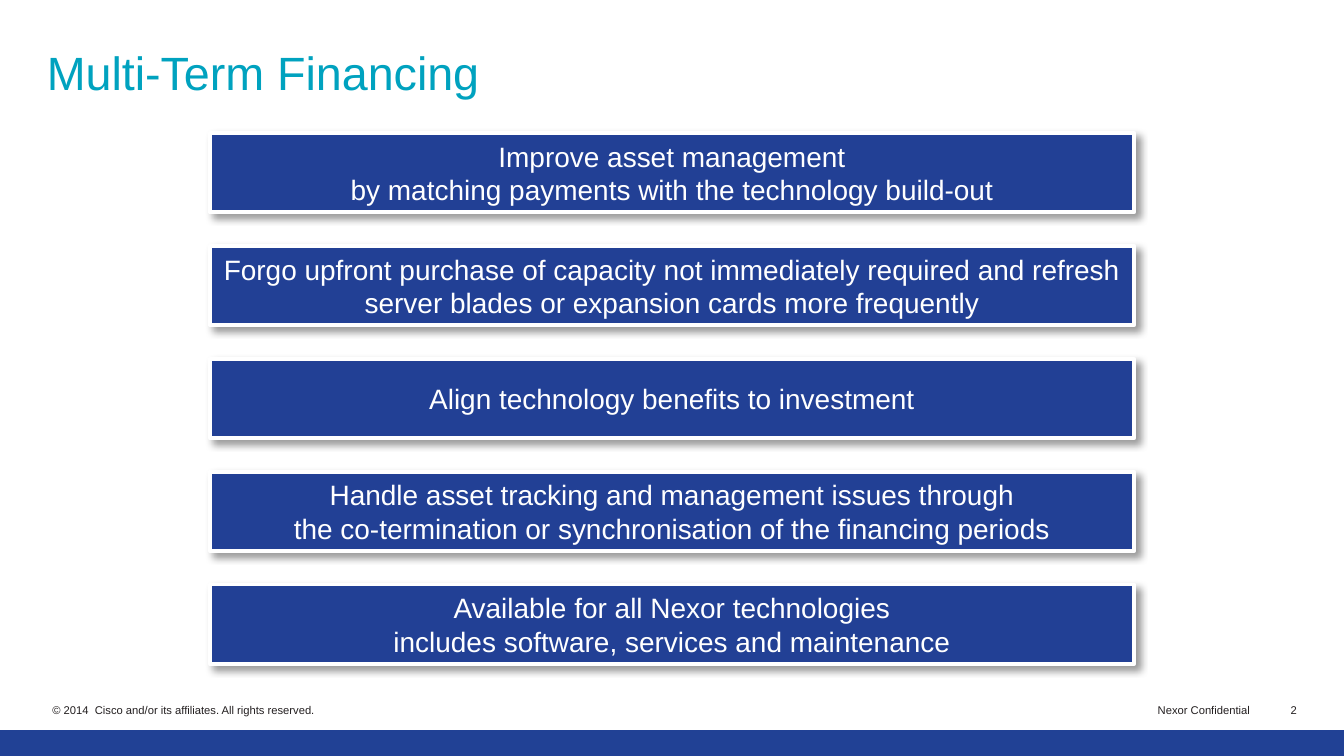
from lxml.etree import SubElement
from pptx import Presentation
from pptx.dml.color import RGBColor
from pptx.enum.shapes import MSO_CONNECTOR, MSO_SHAPE
from pptx.enum.text import MSO_ANCHOR, PP_ALIGN
from pptx.oxml.ns import qn
from pptx.util import Inches, Pt

WIDTH = 10
HEIGHT = WIDTH * 9 / 16
BENEFIT_LEFT, BENEFIT_TOP = 1.56, 0.99
BENEFIT_WIDTH, BENEFIT_HEIGHT = 6.88, 0.59
ROW_PITCH = 0.84
FOOTER_TOP, FOOTER_HEIGHT = 5.19, 0.17

BENEFITS = [
    "Improve asset management\vby matching payments with the technology build-out",
    "Forgo upfront purchase of capacity not immediately required and refresh "
    "server blades or expansion cards more frequently",
    "Align technology benefits to investment",
    "Handle asset tracking and management issues through\v"
    "the co-termination or synchronisation of the financing periods",
    "Available for all Nexor technologies\vincludes software, services and maintenance",
]
FOOTERS = [
    ("© 2014  Cisco and/or its affiliates. All rights reserved.", 0.32, 3.74, PP_ALIGN.LEFT, True),
    ("Nexor Confidential", 8.54, 0.83, PP_ALIGN.RIGHT, False),
    ("2", 9.48, 0.24, PP_ALIGN.RIGHT, False),
]


def color(value):
    return RGBColor.from_string(value)


def set_text(shape, text, size, fill, align, anchor, insets=(0.1, 0.05), wrap=True):
    tf = shape.text_frame
    tf.text = text
    tf.word_wrap = wrap
    tf.vertical_anchor = anchor
    tf.margin_left = tf.margin_right = Inches(insets[0])
    tf.margin_top = tf.margin_bottom = Inches(insets[1])
    p = tf.paragraphs[0]
    p.alignment = align
    for r in p.runs:
        r.font.name = "Arial"
        r.font.size = Pt(size)
        r.font.color.rgb = color(fill)
    return p


def add_shadow(shape):
    effects = SubElement(shape.element.spPr, qn("a:effectLst"))
    shadow = SubElement(effects, qn("a:outerShdw"), blurRad=str(Pt(4)),
                        dist=str(Pt(3)), dir="2700000", algn="tl", rotWithShape="0")
    black = SubElement(shadow, qn("a:srgbClr"), val="000000")
    SubElement(black, qn("a:alpha"), val="40000")


def add_title(s, text):
    box = s.shapes.add_textbox(Inches(0.25), Inches(0.35), Inches(9.39), Inches(0.69))
    p = set_text(box, text, 25, "00A2BF", PP_ALIGN.LEFT, MSO_ANCHOR.TOP, (0.1, 0.06))
    p.line_spacing = 0.8


def add_benefit(s, row, text):
    sp = s.shapes.add_shape(
        MSO_SHAPE.RECTANGLE, Inches(BENEFIT_LEFT), Inches(BENEFIT_TOP + row * ROW_PITCH),
        Inches(BENEFIT_WIDTH), Inches(BENEFIT_HEIGHT))
    sp.fill.solid()
    sp.fill.fore_color.rgb = color("224095")
    sp.line.color.rgb = color("FFFFFF")
    sp.line.width = Pt(2)
    add_shadow(sp)
    set_text(sp, text, 15, "FFFFFF", PP_ALIGN.CENTER, MSO_ANCHOR.MIDDLE, (0.08, 0.05))


def add_footer(s, text, left, width, align, wrap):
    box = s.shapes.add_textbox(Inches(left), Inches(FOOTER_TOP),
                               Inches(width), Inches(FOOTER_HEIGHT))
    set_text(box, text, 6, "231F20", align, MSO_ANCHOR.BOTTOM, (0.07, 0.03), wrap)


def add_bottom_band(s):
    y = Inches(5.53)
    band = s.shapes.add_connector(MSO_CONNECTOR.STRAIGHT, 0, y, Inches(WIDTH), y)
    band.line.color.rgb = color("214195")
    band.line.width = Pt(14)
    SubElement(band.element.spPr, qn("a:effectLst"))


def main():
    prs = Presentation()
    prs.slide_width, prs.slide_height = Inches(WIDTH), Inches(HEIGHT)
    s = prs.slides.add_slide(prs.slide_layouts[6])
    for footer in FOOTERS:
        add_footer(s, *footer)
    add_bottom_band(s)
    add_title(s, "Multi-Term Financing")
    for row, text in reversed(list(enumerate(BENEFITS))):
        add_benefit(s, row, text)
    prs.save("out.pptx")


if __name__ == "__main__":
    main()
